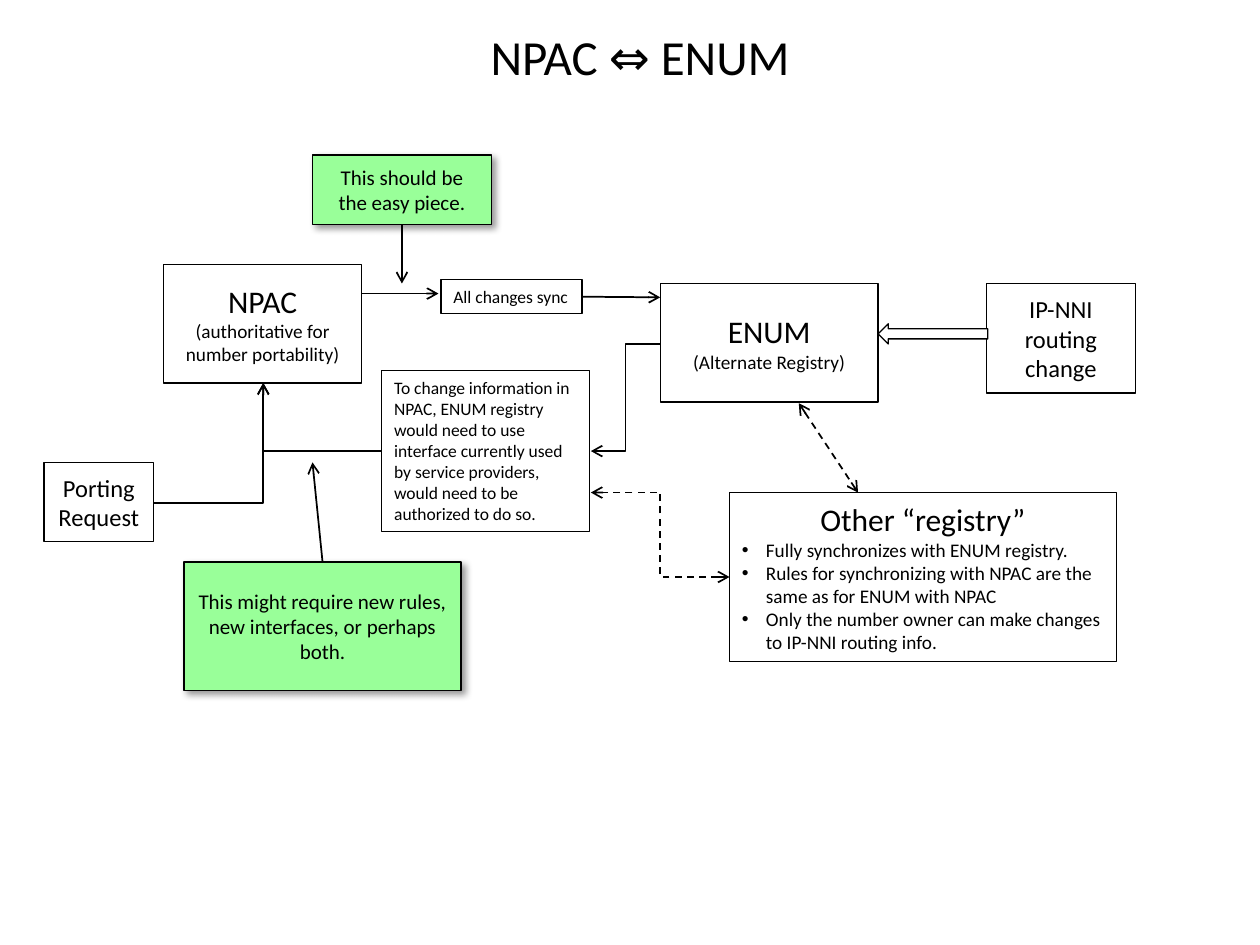
from lxml import etree
from pptx import Presentation
from pptx.dml.color import RGBColor
from pptx.enum.dml import MSO_LINE
from pptx.enum.shapes import MSO_CONNECTOR, MSO_SHAPE
from pptx.enum.text import MSO_ANCHOR, MSO_AUTO_SIZE, PP_ALIGN
from pptx.oxml.ns import qn
from pptx.util import Inches, Pt

BLACK = RGBColor(0x00, 0x00, 0x00)
WHITE = RGBColor(0xFF, 0xFF, 0xFF)
GREEN = RGBColor(0x99, 0xFF, 0x99)
CENTER, LEFT = PP_ALIGN.CENTER, PP_ALIGN.LEFT
TOP, MIDDLE = MSO_ANCHOR.TOP, MSO_ANCHOR.MIDDLE
RECTANGLE, LEFT_ARROW = MSO_SHAPE.RECTANGLE, MSO_SHAPE.LEFT_ARROW
STRAIGHT, ELBOW = MSO_CONNECTOR.STRAIGHT, MSO_CONNECTOR.ELBOW
DASH = MSO_LINE.DASH
FIT_TEXT = MSO_AUTO_SIZE.SHAPE_TO_FIT_TEXT
SIDE_TOP, SIDE_BOTTOM, SIDE_RIGHT = 0, 2, 3


class Diagram:
    font = "Calibri"
    outline = Pt(0.75)
    connector_width = Pt(1)
    bullet_indent = Inches(0.19)

    def __init__(self, slide):
        self.slide = slide

    def fill_paragraph(self, paragraph, text, size, align):
        paragraph.alignment = align
        run = paragraph.add_run()
        run.text = text
        run.font.name = self.font
        run.font.size = Pt(size)
        run.font.color.rgb = BLACK

    def add_lines(self, frame, lines, align=CENTER):
        """Fill an empty text frame with (text, size) lines."""
        for index, (text, size) in enumerate(lines):
            paragraph = frame.add_paragraph() if index else frame.paragraphs[0]
            self.fill_paragraph(paragraph, text, size, align)

    def title(self, text, left, top, width, height):
        box = self.slide.shapes.add_textbox(
            Inches(left), Inches(top), Inches(width), Inches(height))
        frame = box.text_frame
        frame.word_wrap = True
        frame.vertical_anchor = MIDDLE
        self.add_lines(frame, [(text, 28)])

    def block(self, left, top, width, height, fill=WHITE, kind=RECTANGLE):
        shape = self.slide.shapes.add_shape(
            kind, Inches(left), Inches(top), Inches(width), Inches(height))
        shape.shadow.inherit = False
        shape.fill.solid()
        shape.fill.fore_color.rgb = fill
        shape.line.color.rgb = BLACK
        shape.line.width = self.outline
        return shape

    def box(self, lines, *place, fill=WHITE):
        shape = self.block(*place, fill=fill)
        shape.text_frame.word_wrap = True
        shape.text_frame.vertical_anchor = MIDDLE
        self.add_lines(shape.text_frame, lines)
        return shape

    def label(self, text, *place, wrap=True):
        """Small left-aligned box that grows with its text."""
        shape = self.block(*place)
        frame = shape.text_frame
        frame.word_wrap = wrap
        frame.auto_size = FIT_TEXT
        frame.vertical_anchor = TOP
        self.add_lines(frame, [(text, 10)], LEFT)
        return shape

    def note(self, text, *place):
        """Green comment box with a soft shadow."""
        shape = self.box([(text, 12)], *place, fill=GREEN)
        effects = shape._element.spPr.find(qn("a:effectLst"))
        shadow = etree.SubElement(
            effects, qn("a:outerShdw"), blurRad=str(Pt(4)), dist=str(Pt(3)),
            dir=str(45 * 60000), algn="tl", rotWithShape="0")
        color = etree.SubElement(shadow, qn("a:srgbClr"), val=str(BLACK))
        etree.SubElement(color, qn("a:alpha"), val="40000")
        return shape

    def bullets(self, shape, texts, size):
        for text in texts:
            paragraph = shape.text_frame.add_paragraph()
            self.fill_paragraph(paragraph, text, size, LEFT)
            properties = paragraph._p.get_or_add_pPr()
            properties.set("marL", str(self.bullet_indent))
            properties.set("indent", str(-self.bullet_indent))
            etree.SubElement(properties, qn("a:buFont"), typeface="Arial")
            etree.SubElement(properties, qn("a:buChar"), char="•")

    def arrow(self, start, end, kind=STRAIGHT, both_ways=False, one_bend=False):
        """Arrow to end; a two-way arrow is dashed."""
        connector = self.slide.shapes.add_connector(
            kind, *(Inches(value) for value in (*start, *end)))
        connector.line.color.rgb = BLACK
        connector.line.width = self.connector_width
        properties = connector._element.spPr
        if one_bend:
            properties.find(qn("a:prstGeom")).set("prst", "bentConnector2")
        if both_ways:
            connector.line.dash_style = DASH
        line = properties.find(qn("a:ln"))
        for tag in ("a:headEnd", "a:tailEnd") if both_ways else ("a:tailEnd",):
            etree.SubElement(line, qn(tag), type="arrow")
        etree.SubElement(properties, qn("a:effectLst"))
        return connector


def main():
    presentation = Presentation()
    presentation.slide_width = Inches(10)
    presentation.slide_height = Inches(7.5)
    slide = presentation.slides.add_slide(presentation.slide_layouts[6])
    diagram = Diagram(slide)

    diagram.title("NPAC ⇔ ENUM", 0.83, 0.13, 8.5, 0.63)
    diagram.box([("NPAC", 18), ("(authoritative for number portability)", 11)],
                1.3, 2.1, 1.57, 0.94)
    diagram.box([("Porting Request", 14)], 0.35, 3.67, 0.87, 0.63)
    diagram.box([("ENUM", 18), ("(Alternate Registry)", 11)],
                5.24, 2.25, 1.73, 0.94)
    sync = diagram.label("All changes sync", 3.5, 2.22, 1.12, 0.27, wrap=False)
    diagram.label(
        "To change information in NPAC, ENUM registry would need to use "
        "interface currently used by service providers, would need to be "
        "authorized to do so.", 3.03, 2.94, 1.65, 1.28)

    sync_to_enum = diagram.arrow((4.63, 2.36), (5.24, 2.36))
    sync_to_enum.begin_connect(sync, SIDE_RIGHT)
    diagram.arrow((2.87, 2.33), (3.48, 2.33))

    diagram.box([("IP-NNI routing change", 14)], 7.83, 2.25, 1.18, 0.87)
    diagram.block(6.97, 2.57, 0.87, 0.16, kind=LEFT_ARROW)

    npac_bottom = (2.09, 3.04)
    diagram.arrow((5.24, 2.73), (4.69, 3.58), ELBOW)
    diagram.arrow((3.03, 3.58), npac_bottom, ELBOW, one_bend=True)
    diagram.arrow((1.22, 3.99), npac_bottom, ELBOW, one_bend=True)

    rules = diagram.note(
        "This might require new rules, new interfaces, or perhaps both.",
        1.46, 4.46, 2.2, 1.02)
    diagram.arrow((2.56, 4.46), (2.48, 3.67)).begin_connect(rules, SIDE_TOP)
    easy = diagram.note("This should be the easy piece.", 2.48, 1.23, 1.42, 0.55)
    diagram.arrow((3.19, 1.78), (3.19, 2.25)).begin_connect(easy, SIDE_BOTTOM)

    registry = diagram.box([("Other “registry”", 18)], 5.79, 3.91, 3.07, 1.34)
    diagram.bullets(registry, [
        "Fully synchronizes with ENUM registry.",
        "Rules for synchronizing with NPAC are the same as for ENUM with NPAC",
        "Only the number owner can make changes to IP-NNI routing info.",
    ], 11)
    diagram.arrow((6.34, 3.2), (6.81, 3.91), both_ways=True)
    diagram.arrow((5.79, 4.58), (4.69, 3.91), ELBOW, both_ways=True)

    presentation.save("out.pptx")


if __name__ == "__main__":
    main()
